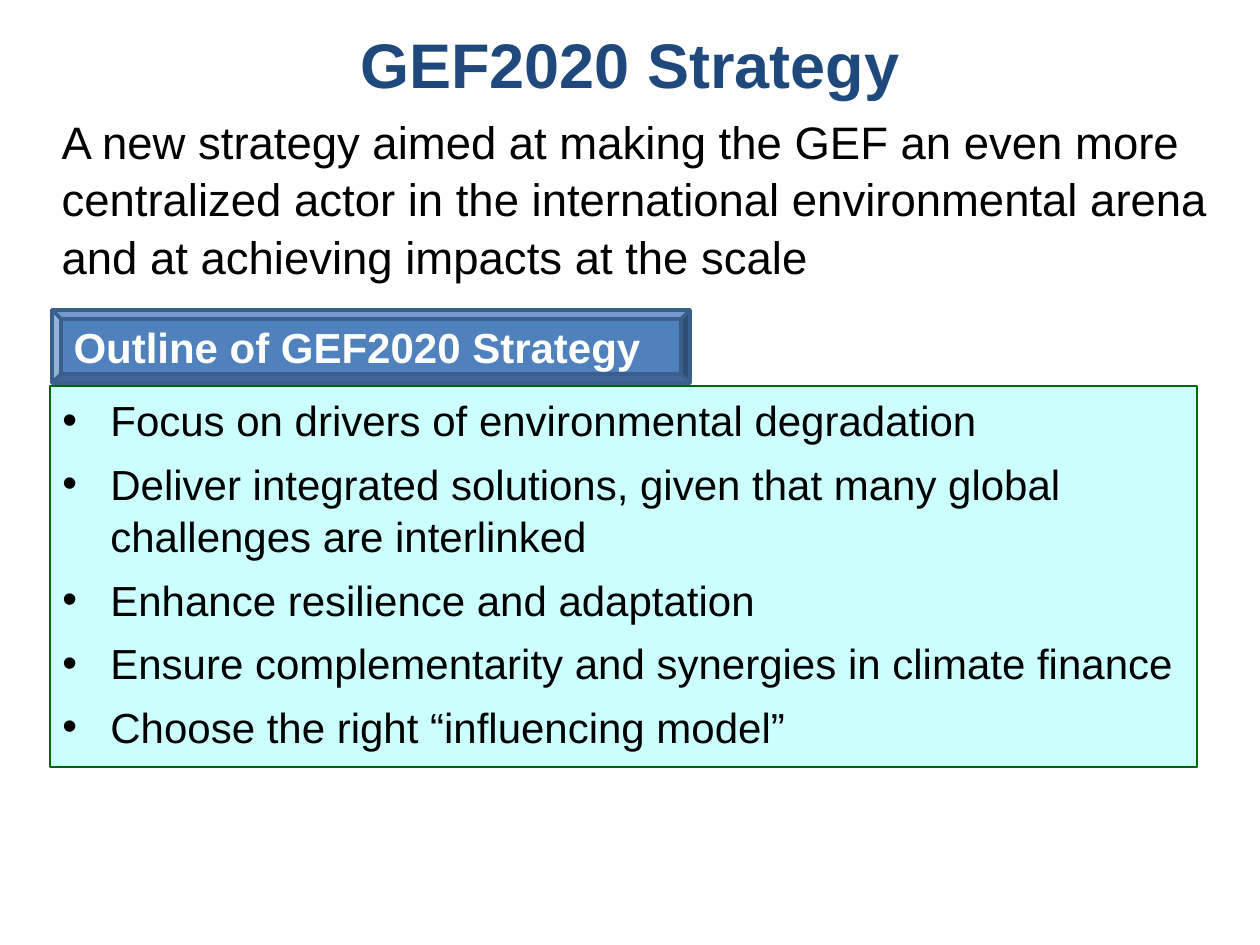
from lxml.etree import SubElement
from pptx import Presentation
from pptx.dml.color import RGBColor
from pptx.enum.shapes import MSO_SHAPE as SHAPE
from pptx.enum.text import MSO_ANCHOR as ANCHOR, MSO_AUTO_SIZE as AUTO, PP_ALIGN as ALIGN
from pptx.oxml.ns import qn
from pptx.util import Pt

PX = 914400 // 126  # EMU per px

NAVY = RGBColor(0x1F, 0x49, 0x7D)
BLACK = RGBColor(0, 0, 0)
WHITE = RGBColor(0xFF, 0xFF, 0xFF)
CYAN = RGBColor(0xCC, 0xFF, 0xFF)
GREEN = RGBColor(0, 0x66, 0)
BLUE = RGBColor(0x4F, 0x81, 0xBD)
DARK_BLUE = RGBColor(0x3A, 0x5F, 0x8C)

TITLE = "GEF2020 Strategy"
INTRO = ("A new strategy aimed at making the GEF an even more centralized actor in the "
         "international environmental arena and at achieving impacts at the scale")
HEADING = "Outline of GEF2020 Strategy"
POINTS = [
    "Focus on drivers of environmental degradation",
    "Deliver integrated solutions, given that many global challenges are interlinked",
    "Enhance resilience and adaptation",
    "Ensure complementarity and synergies in climate finance",
    "Choose the right “influencing model”",
]


def set_bullet(p, char=None, indent=0):
    pPr = p._p.get_or_add_pPr()
    pPr.set("marL", str(indent * PX))
    pPr.set("indent", str(-indent * PX))
    if char:
        SubElement(pPr, qn("a:buFont"), typeface="Arial")
        SubElement(pPr, qn("a:buChar"), char=char)
    else:
        SubElement(pPr, qn("a:buNone"))


def style(p, size, color, bold=False, align=ALIGN.LEFT):
    p.alignment = align
    for r in p.runs:
        r.font.name = "Arial"
        r.font.size = Pt(size)
        r.font.bold = bold
        r.font.color.rgb = color


def place(sp, x, y, w, h, anchor):
    sp.left, sp.top, sp.width, sp.height = (v * PX for v in (x, y, w, h))
    tf = sp.text_frame
    tf.word_wrap = True
    tf.auto_size = AUTO.NONE
    tf.vertical_anchor = anchor
    return tf


def add_box(slide, kind, box, fill, line, line_width, anchor):
    sp = slide.shapes.add_shape(kind, 0, 0, PX, PX)
    sp.shadow.inherit = False
    sp.fill.solid()
    sp.fill.fore_color.rgb = fill
    sp.line.color.rgb = line
    sp.line.width = Pt(line_width)
    return place(sp, *box, anchor)


def fill_title(slide, x, y, w, h):
    tf = place(slide.shapes.title, x, y, w, h, ANCHOR.MIDDLE)
    tf.text = TITLE
    style(tf.paragraphs[0], 36, NAVY, True, ALIGN.CENTER)


def fill_intro(slide, x, y, w, h):
    tf = place(slide.placeholders[1], x, y, w, h, ANCHOR.TOP)
    tf.text = INTRO
    p = tf.paragraphs[0]
    set_bullet(p)
    p.line_spacing = 1.05
    p.space_before = Pt(0)
    style(p, 26, BLACK)


def add_outline(slide, x, y, w, h):
    # List panel, below its heading
    tf = add_box(slide, SHAPE.RECTANGLE, (x, y + 76, w, h - 76), CYAN, GREEN, 0.75, ANCHOR.TOP)
    for i, point in enumerate(POINTS):
        p = tf.add_paragraph() if i else tf.paragraphs[0]
        p.text = point
        set_bullet(p, "•", 48)
        p.line_spacing = 1.05
        p.space_before = Pt(6 if i else 0)
        style(p, 24, BLACK)

    # Heading tab
    tf = add_box(slide, SHAPE.BEVEL, (x + 2, y, 638, 73), BLUE, DARK_BLUE, 2, ANCHOR.MIDDLE)
    tf.text = HEADING
    style(tf.paragraphs[0], 24, WHITE, True)


def main():
    prs = Presentation()
    prs.slide_width, prs.slide_height = 1260 * PX, 945 * PX
    slide = prs.slides.add_slide(prs.slide_layouts[1])
    fill_title(slide, 63, 21, 1134, 84)
    fill_intro(slide, 49, 105, 1197, 220)
    add_outline(slide, 50, 310, 1147, 457)
    prs.save("out.pptx")


if __name__ == "__main__":
    main()
